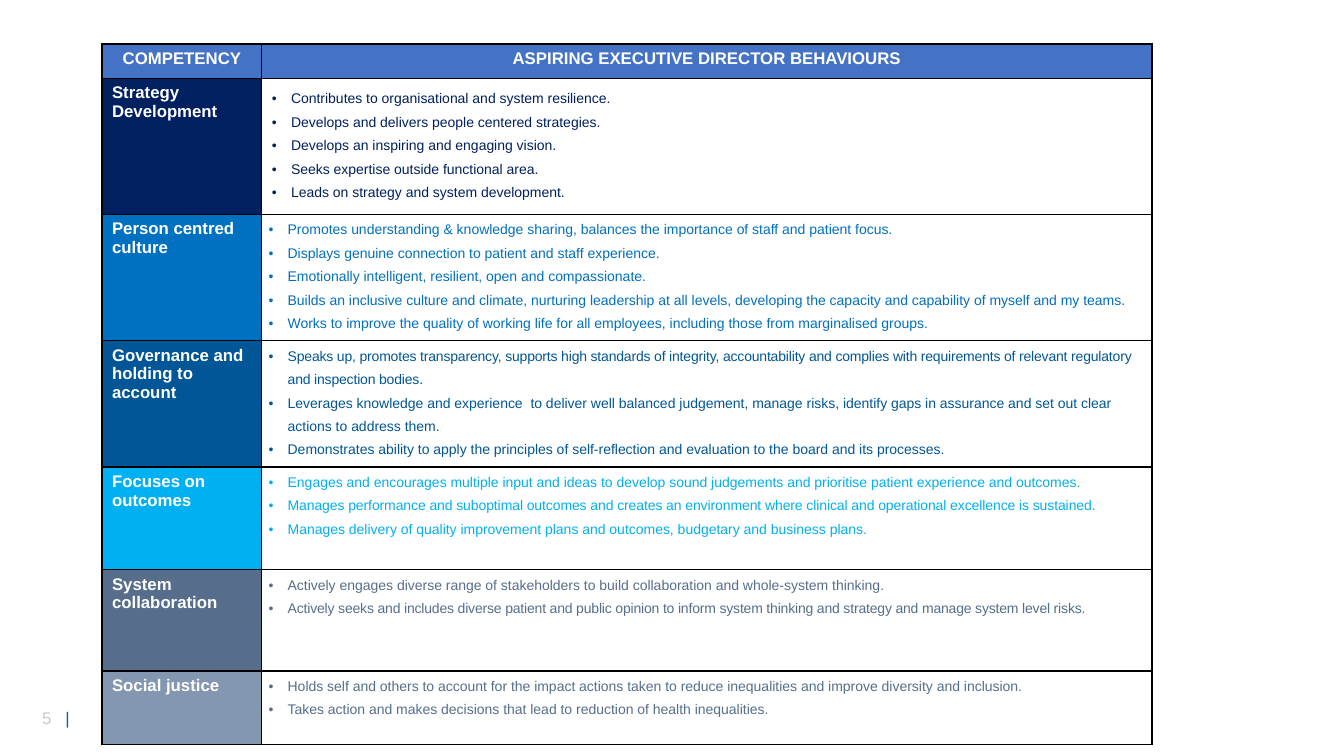
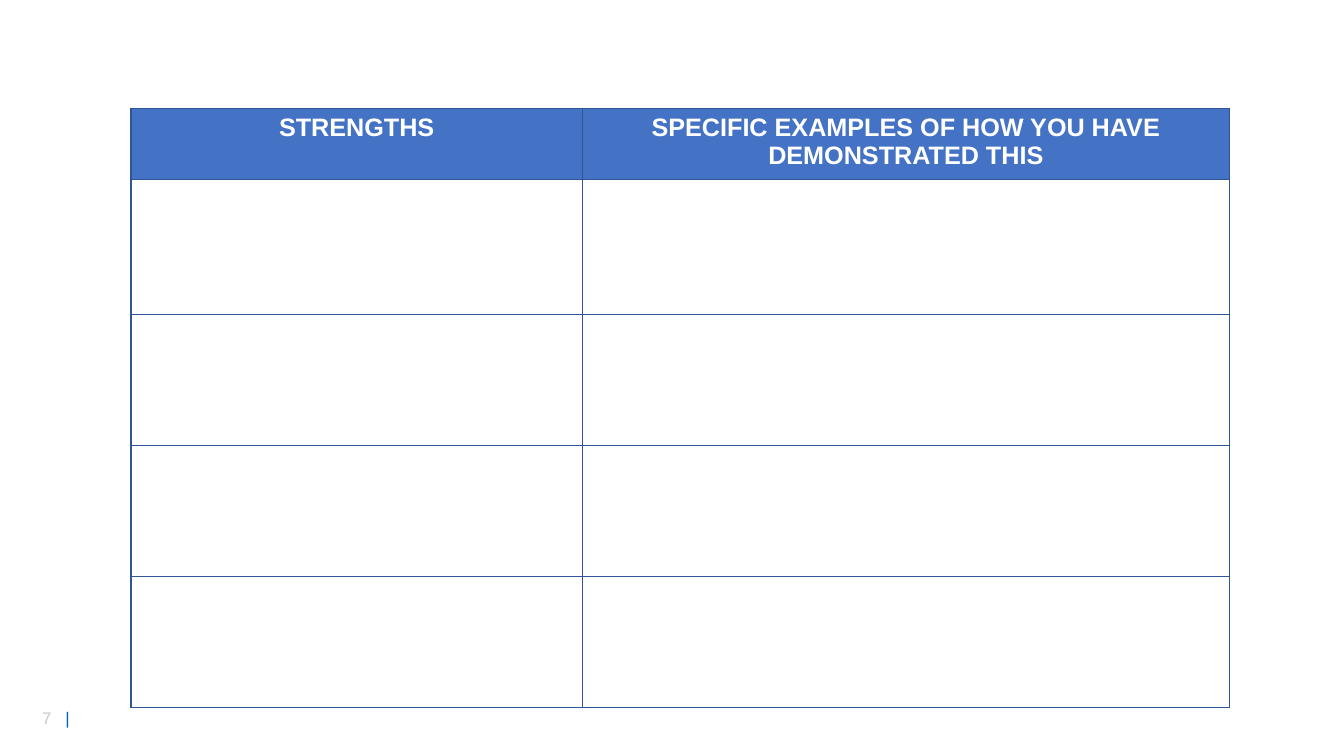
from dataclasses import dataclass

from lxml.etree import SubElement
from pptx import Presentation
from pptx.dml.color import RGBColor
from pptx.enum.text import PP_ALIGN
from pptx.oxml import parse_xml
from pptx.oxml.ns import nsdecls, qn
from pptx.slide import Slide
from pptx.table import Table, _Cell
from pptx.text.text import TextFrame, _Paragraph
from pptx.util import Cm, Pt

FONT = "Arial"
WHITE = "FFFFFF"
BLACK = "000000"
HEADER_BLUE = "4472C4"
GRID_BLUE = "2F5597"
NUMBER_GREY = "C9C9C9"
BAR_BLUE = "005EB8"
SLATE = "566E8C"
BULLET_HANG = 0.48  # cm


@dataclass(frozen=True)
class Behaviour:
    text: str
    spacing: float = 0  # letter spacing in points


@dataclass(frozen=True)
class Competency:
    name: str
    fill: str
    text_color: str
    height: float  # cm
    behaviours: tuple[Behaviour, ...]
    padded: bool = False


@dataclass(frozen=True)
class Grid:
    left: float
    top: float
    widths: tuple[float, ...]
    heights: tuple[float, ...]
    border: str


COMPETENCIES = (
    Competency("Strategy Development", "002060", "002060", 3.43, (
        Behaviour("Contributes to organisational and system resilience."),
        Behaviour("Develops and delivers people centered strategies."),
        Behaviour("Develops an inspiring and engaging vision."),
        Behaviour("Seeks expertise outside functional area."),
        Behaviour("Leads on strategy and system development."),
    ), padded=True),
    Competency("Person centred culture", "0070C0", "0070C0", 3.18, (
        Behaviour("Promotes understanding & knowledge sharing, balances the importance "
                  "of staff and patient focus."),
        Behaviour("Displays genuine connection to patient and staff experience."),
        Behaviour("Emotionally intelligent, resilient, open and compassionate."),
        Behaviour("Builds an inclusive culture and climate, nurturing leadership at all "
                  "levels, developing the capacity and capability of myself and my teams."),
        Behaviour("Works to improve the quality of working life for all employees, "
                  "including those from marginalised groups."),
    )),
    Competency("Governance and holding to account", "005696", "005696", 3.18, (
        Behaviour("Speaks up, promotes transparency, supports high standards of integrity, "
                  "accountability and complies with requirements of relevant regulatory "
                  "and inspection bodies.", -0.1),
        Behaviour("Leverages knowledge and experience  to deliver well balanced judgement, "
                  "manage risks, identify gaps in assurance and set out clear actions to "
                  "address them."),
        Behaviour("Demonstrates ability to apply the principles of self-reflection and "
                  "evaluation to the board and its processes."),
    )),
    Competency("Focuses on outcomes", "00B0F0", "00B0F0", 2.59, (
        Behaviour("Engages and encourages multiple input and ideas to develop sound "
                  "judgements and prioritise patient experience and outcomes."),
        Behaviour("Manages performance and suboptimal outcomes and creates an environment "
                  "where clinical and operational excellence is sustained.", -0.05),
        Behaviour("Manages delivery of quality improvement plans and outcomes, budgetary "
                  "and business plans."),
    )),
    Competency("System collaboration", SLATE, SLATE, 2.55, (
        Behaviour("Actively engages diverse range of stakeholders to build collaboration "
                  "and whole-system thinking."),
        Behaviour("Actively seeks and includes diverse patient and public opinion to inform "
                  "system thinking and strategy and manage system level risks.", -0.1),
    )),
    Competency("Social justice", "8497B0", SLATE, 1.85, (
        Behaviour("Holds self and others to account for the impact actions taken to reduce "
                  "inequalities and improve diversity and inclusion."),
        Behaviour("Takes action and makes decisions that lead to reduction of health "
                  "inequalities."),
    )),
)


def rgb(color: str) -> RGBColor:
    return RGBColor.from_string(color)


def add_span(para: _Paragraph, text: str, *, size: float, color: str,
             bold: bool = False, spacing: float = 0) -> None:
    span = para.add_run()
    span.text = text
    span.font.name = FONT
    span.font.size = Pt(size)
    span.font.bold = bold
    span.font.color.rgb = rgb(color)
    if spacing:
        span.font._element.set("spc", str(round(spacing * 100)))


def add_bullets(frame: TextFrame, behaviours: tuple[Behaviour, ...], *,
                color: str, indent: float) -> None:
    for index, behaviour in enumerate(behaviours):
        para = frame.add_paragraph() if index else frame.paragraphs[0]
        para.line_spacing = 1.5
        properties = para._p.get_or_add_pPr()
        properties.set("marL", str(Cm(indent)))
        properties.set("indent", str(-Cm(BULLET_HANG)))
        SubElement(properties, qn("a:buFont"), typeface=FONT)
        SubElement(properties, qn("a:buChar"), char="•")
        add_span(para, behaviour.text, size=10, color=color, spacing=behaviour.spacing)


def format_cell(cell: _Cell, border: str, fill: str | None = None) -> None:
    properties = cell._tc.get_or_add_tcPr()
    for index, side in enumerate(("lnL", "lnR", "lnT", "lnB")):
        properties.insert(index, parse_xml(
            f'<a:{side} {nsdecls("a")} w="{Pt(1)}"><a:solidFill>'
            f'<a:srgbClr val="{border}"/></a:solidFill></a:{side}>'))
    if fill:
        cell.fill.solid()
        cell.fill.fore_color.rgb = rgb(fill)
    else:
        cell.fill.background()


def add_grid(page: Slide, grid: Grid, headers: tuple[str, ...], header_size: float) -> Table:
    """Add a bordered table with a filled header row and empty body cells."""
    table = page.shapes.add_table(
        len(grid.heights), len(grid.widths), Cm(grid.left), Cm(grid.top),
        Cm(sum(grid.widths)), Cm(sum(grid.heights))).table
    table.first_row = table.horz_banding = False
    for column, width in zip(table.columns, grid.widths):
        column.width = Cm(width)
    for row, height in zip(table.rows, grid.heights):
        row.height = Cm(height)
    for cell in table.iter_cells():
        format_cell(cell, grid.border)
    for column, header in enumerate(headers):
        cell = table.cell(0, column)
        cell.fill.solid()
        cell.fill.fore_color.rgb = rgb(HEADER_BLUE)
        para = cell.text_frame.paragraphs[0]
        para.alignment = PP_ALIGN.CENTER
        add_span(para, header, size=header_size, color=WHITE, bold=True)
    return table


def add_page(deck: Presentation, number: int) -> Slide:
    """Add a blank page with its number and the bar beside it."""
    page = deck.slides.add_slide(deck.slide_layouts[6])
    box = page.shapes.add_textbox(Cm(0.81), Cm(17.7), Cm(1.8), Cm(0.77))
    box.text_frame.word_wrap = True
    para = box.text_frame.paragraphs[0]
    tabs = SubElement(para._p.get_or_add_pPr(), qn("a:tabLst"))
    SubElement(tabs, qn("a:tab"), pos=str(Cm(0.59)), algn="l")
    add_span(para, f"{number}\t", size=12, color=NUMBER_GREY)
    add_span(para, "|", size=12, color=BAR_BLUE)
    return page


def add_competency_page(deck: Presentation) -> None:
    heights = (0.86, *(competency.height for competency in COMPETENCIES))
    grid = Grid(2.57, 1.11, (4.03, 22.43), heights, BLACK)
    table = add_grid(add_page(deck, 5), grid,
                     ("COMPETENCY", "ASPIRING EXECUTIVE DIRECTOR BEHAVIOURS"), 12)
    for row, competency in enumerate(COMPETENCIES, start=1):
        name_cell, behaviour_cell = table.cell(row, 0), table.cell(row, 1)
        name_cell.fill.solid()
        name_cell.fill.fore_color.rgb = rgb(competency.fill)
        add_span(name_cell.text_frame.paragraphs[0], competency.name,
                 size=12, color=WHITE, bold=True)
        if not competency.padded:
            behaviour_cell.margin_left = behaviour_cell.margin_right = 0
            behaviour_cell.margin_top = behaviour_cell.margin_bottom = 0
        add_bullets(behaviour_cell.text_frame, competency.behaviours,
                    color=competency.text_color,
                    indent=BULLET_HANG if competency.padded else 0.65)


def add_strengths_page(deck: Presentation) -> None:
    grid = Grid(3.3, 2.74, (11.38, 16.3), (1.79, 3.4, 3.3, 3.3, 3.3), GRID_BLUE)
    add_grid(add_page(deck, 7), grid,
             ("STRENGTHS", "SPECIFIC EXAMPLES OF HOW YOU HAVE DEMONSTRATED THIS"), 18)


def main() -> None:
    deck = Presentation()
    deck.slide_width, deck.slide_height = Cm(33.87), Cm(19.05)
    add_competency_page(deck)
    add_strengths_page(deck)
    deck.save("out.pptx")


if __name__ == "__main__":
    main()
